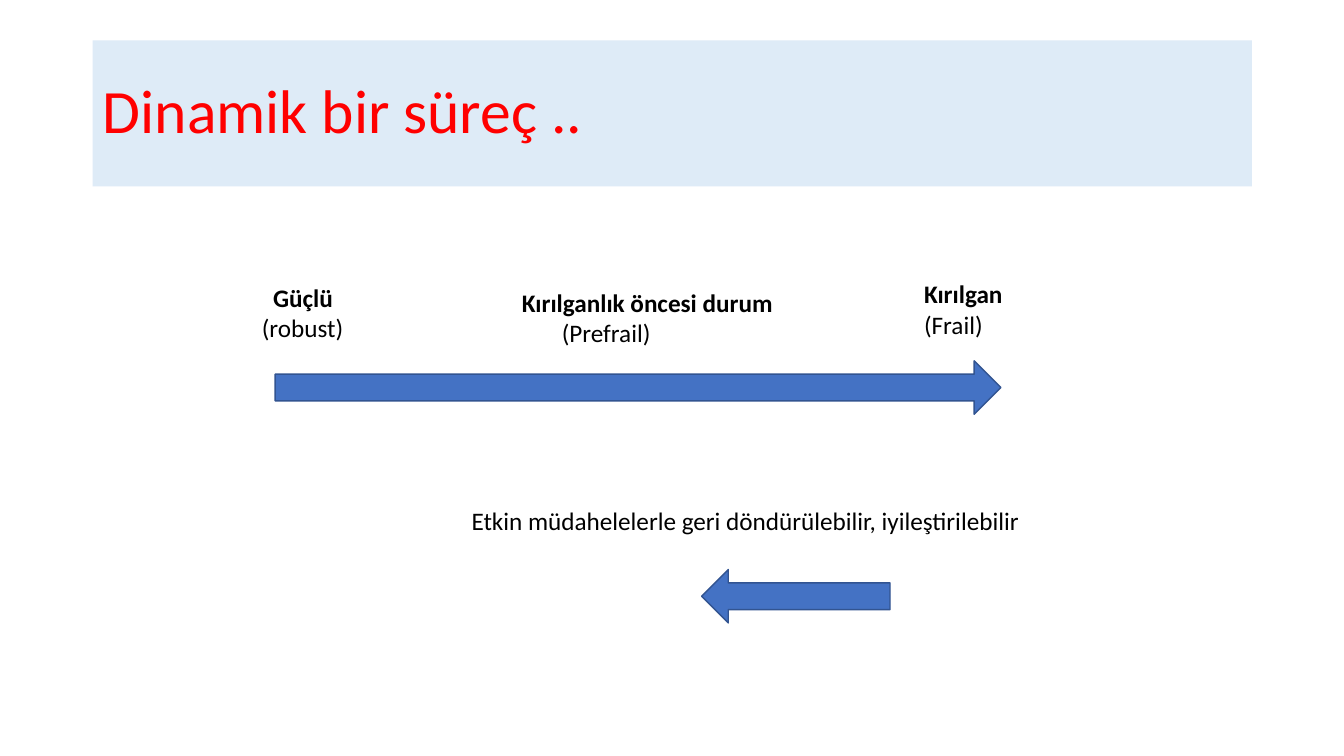
"""Build the slide on frailty as a dynamic process."""
from pptx import Presentation
from pptx.dml.color import RGBColor
from pptx.enum.shapes import MSO_SHAPE
from pptx.enum.text import MSO_ANCHOR, PP_ALIGN
from pptx.util import Pt

RIGHT_ARROW = MSO_SHAPE.RIGHT_ARROW
MIDDLE = MSO_ANCHOR.MIDDLE
LEFT = PP_ALIGN.LEFT

FONT = "Calibri"
TITLE = "Dinamik bir süreç .."
TITLE_BOX = (66.24, 28.8, 828, 104.4)

# Each line is text, bold, left indent.
LABELS = [
    ((180, 198, 86.4, 51), [("Güçlü", True, 8), ("(robust)", False, 0)]),
    ((653, 195.6, 72, 51), [("Kırılgan", True, 0), ("(Frail)", False, 0)]),
    ((365.76, 201.6, 195.12, 51),
     [("Kırılganlık öncesi durum", True, 0), ("(Prefrail)", False, 28.5)]),
    ((329.76, 357.4, 414.72, 29),
     [("Etkin müdahelelerle geri döndürülebilir, iyileştirilebilir", False, 0)]),
]
ARROWS = [((196.56, 257.76, 518.4, 38.16), 0), ((501.12, 406.8, 134.64, 38.16), 180)]


def color(value):
    return RGBColor.from_string(value)


def write(paragraph, text, size=18, bold=False, fill="000000", indent=0):
    if indent:
        paragraph._p.get_or_add_pPr().set("marL", str(Pt(indent)))
    paragraph.alignment = LEFT
    run = paragraph.add_run()
    run.text = text
    run.font.name = FONT
    run.font.size = Pt(size)
    run.font.bold = bold
    run.font.color.rgb = color(fill)


def add_title(slide):
    title = slide.shapes.title
    title.left, title.top, title.width, title.height = map(Pt, TITLE_BOX)
    title.fill.solid()
    title.fill.fore_color.rgb = color("DEEBF7")
    title.text_frame.vertical_anchor = MIDDLE
    paragraph = title.text_frame.paragraphs[0]
    paragraph.line_spacing = 0.9
    write(paragraph, TITLE, size=44, fill="FF0000")


def add_label(slide, box, lines):
    frame = slide.shapes.add_textbox(*map(Pt, box)).text_frame
    frame.word_wrap = True
    for index, (text, bold, indent) in enumerate(lines):
        paragraph = frame.add_paragraph() if index else frame.paragraphs[0]
        write(paragraph, text, bold=bold, indent=indent)


def add_arrow(slide, box, rotation):
    shape = slide.shapes.add_shape(RIGHT_ARROW, *map(Pt, box))
    shape.rotation = rotation
    shape.shadow.inherit = False
    shape.fill.solid()
    shape.fill.fore_color.rgb = color("4472C4")
    shape.line.color.rgb = color("325491")
    shape.line.width = Pt(1)


def main():
    presentation = Presentation()
    presentation.slide_width, presentation.slide_height = Pt(960), Pt(540)
    slide = presentation.slides.add_slide(presentation.slide_layouts[5])
    add_title(slide)
    for box, lines in LABELS:
        add_label(slide, box, lines)
    for box, rotation in ARROWS:
        add_arrow(slide, box, rotation)
    presentation.save("out.pptx")


if __name__ == "__main__":
    main()
